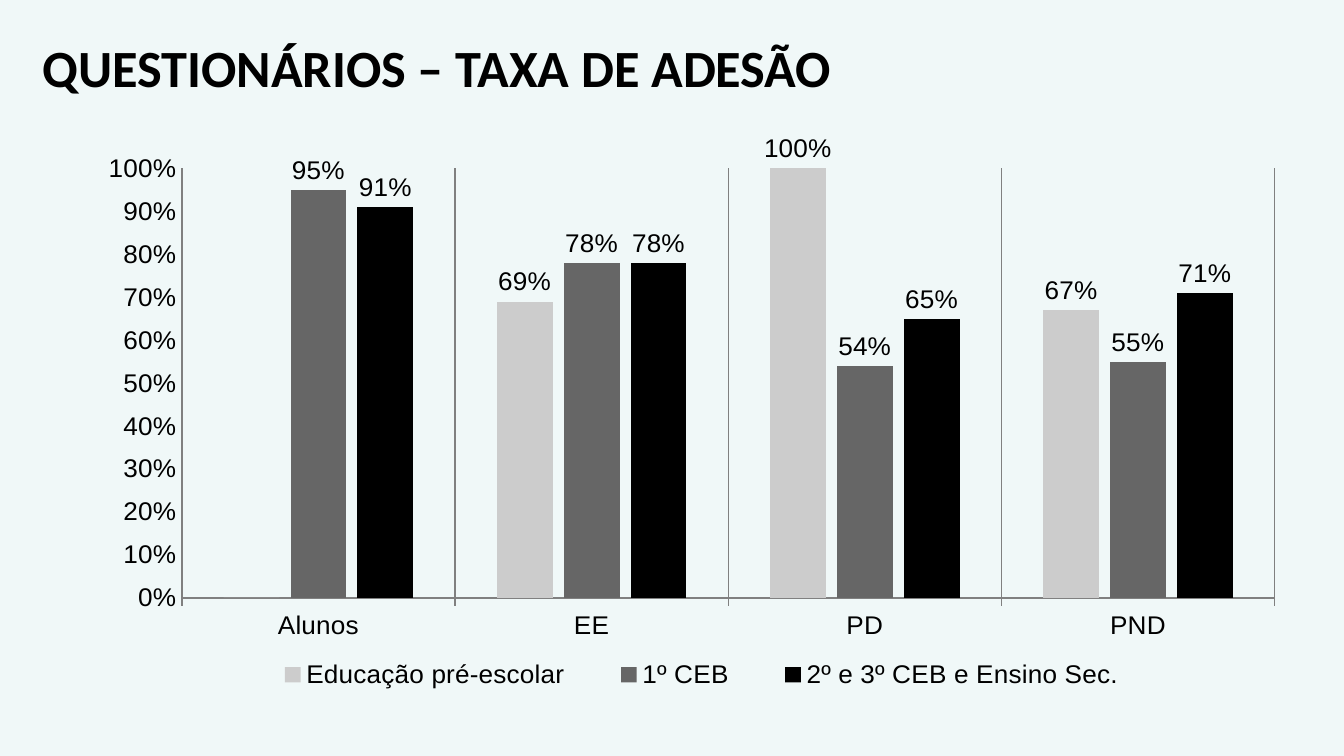
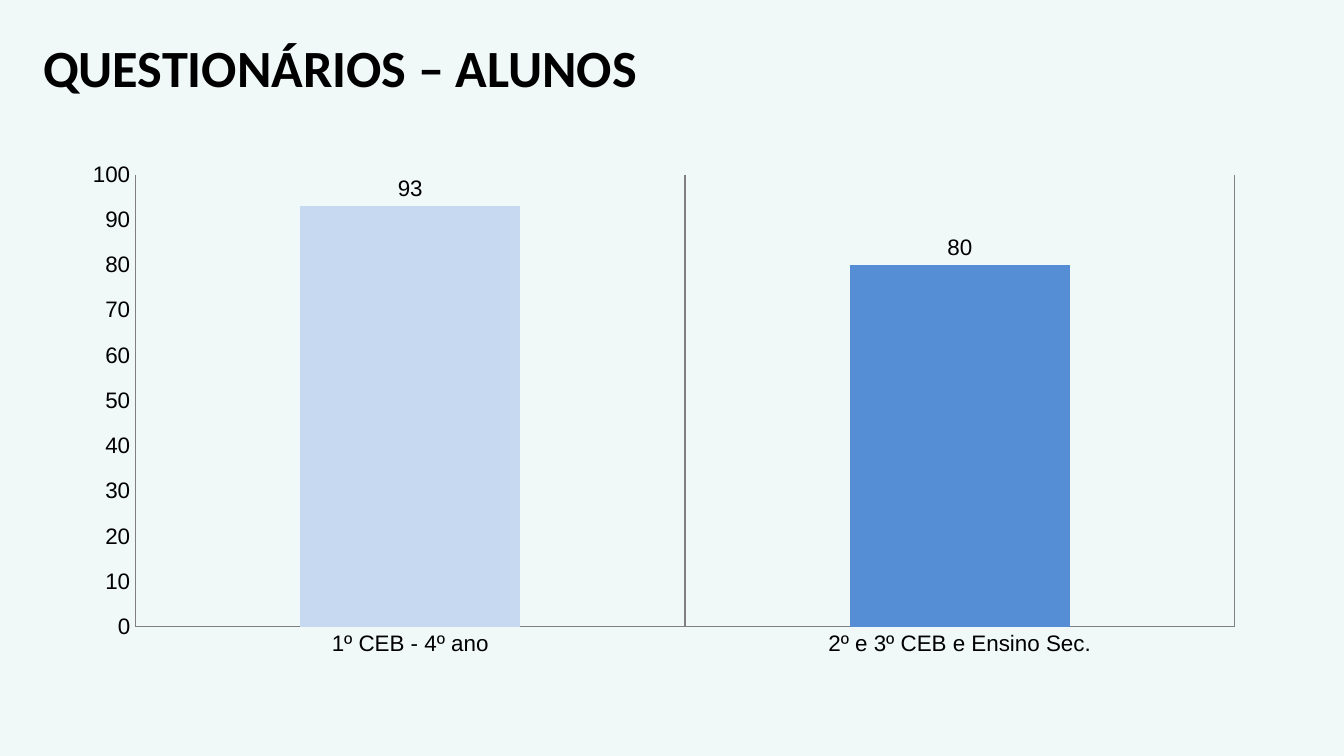
from dataclasses import dataclass
from typing import Optional

import lxml.etree
import pptx
import pptx.chart.chart
import pptx.chart.data
import pptx.dml.color
import pptx.dml.fill
import pptx.enum.chart
import pptx.enum.text
import pptx.oxml.ns
import pptx.slide
import pptx.util

SLIDE_WIDTH = pptx.util.Inches(10)
SLIDE_HEIGHT = SLIDE_WIDTH * 9 // 16
GRID_COLUMNS = 100
GRID_ROWS = 100
COLORS = {
    "background": "F0F8F8",
    "text": "000000",
    "axis": "808080",
    "preschool": "CCCCCC",
    "first_cycle": "666666",
    "upper_cycles": "000000",
    "fourth_year": "C6D9F1",
    "secondary": "558ED5",
}
TITLE_FONT = "Calibri"
CHART_FONT = "Arial"


@dataclass(frozen=True)
class Area:
    column: float
    row: float
    columns: float
    rows: float

    def lengths(self) -> tuple[int, int, int, int]:
        return (
            round(SLIDE_WIDTH * self.column / GRID_COLUMNS),
            round(SLIDE_HEIGHT * self.row / GRID_ROWS),
            round(SLIDE_WIDTH * self.columns / GRID_COLUMNS),
            round(SLIDE_HEIGHT * self.rows / GRID_ROWS),
        )


@dataclass(frozen=True)
class Shares:
    x: float
    y: float
    w: float
    h: float


@dataclass(frozen=True)
class Series:
    name: str
    values: tuple[float, ...]
    colors: tuple[str, ...]


@dataclass(frozen=True)
class ColumnChart:
    area: Area
    plot: Shares
    legend: Optional[Shares]
    categories: tuple[str, ...]
    series: tuple[Series, ...]
    maximum: float
    number_format: str
    font_size: int
    overlap: int
    category_tick: pptx.enum.chart.XL_TICK_MARK


@dataclass(frozen=True)
class ChartSlide:
    title: str
    title_column: float
    title_indent: float
    chart: ColumnChart


CHART_SLIDES = (
    ChartSlide(
        "QUESTIONÁRIOS – TAXA DE ADESÃO",
        title_column=2.2,
        title_indent=1,
        chart=ColumnChart(
            area=Area(5.1, 17.78, 89.8, 75.56),
            plot=Shares(0.094, 0.042, 0.906, 0.766),
            legend=Shares(0.14, 0.91, 0.77, 0.07),
            categories=("Alunos", "EE", "PD", "PND"),
            series=(
                Series("Educação pré-escolar", (0, 0.69, 1, 0.67), ("preschool",)),
                Series("1º CEB", (0.95, 0.78, 0.54, 0.55), ("first_cycle",)),
                Series("2º e 3º CEB e Ensino Sec.", (0.91, 0.78, 0.65, 0.71), ("upper_cycles",)),
            ),
            maximum=1,
            number_format="0%",
            font_size=14,
            overlap=-20,
            category_tick=pptx.enum.chart.XL_TICK_MARK.OUTSIDE,
        ),
    ),
    ChartSlide(
        "QUESTIONÁRIOS – ALUNOS",
        title_column=-2.8,
        title_indent=6,
        chart=ColumnChart(
            area=Area(5.1, 17.78, 89, 74.13),
            plot=Shares(0.056, 0.072, 0.919, 0.807),
            legend=None,
            categories=("1º CEB - 4º ano", "2º e 3º CEB e Ensino Sec."),
            series=(Series("Series 1", (93, 80), ("fourth_year", "secondary")),),
            maximum=100,
            number_format="0",
            font_size=12,
            overlap=40,
            category_tick=pptx.enum.chart.XL_TICK_MARK.NONE,
        ),
    ),
)


def color(name: str) -> pptx.dml.color.RGBColor:
    return pptx.dml.color.RGBColor.from_string(COLORS[name])


def paint(fill: pptx.dml.fill.FillFormat, name: str) -> None:
    fill.solid()
    fill.fore_color.rgb = color(name)


def add_title(slide: pptx.slide.Slide, design: ChartSlide) -> None:
    area = Area(design.title_column, 3.73, 94.5, 16.71)
    frame = slide.shapes.add_textbox(*area.lengths()).text_frame
    frame.word_wrap = True
    frame.margin_left = round(SLIDE_WIDTH * design.title_indent / GRID_COLUMNS)
    frame.vertical_anchor = pptx.enum.text.MSO_ANCHOR.TOP
    paragraph = frame.paragraphs[0]
    paragraph.text = design.title
    paragraph.font.name = TITLE_FONT
    paragraph.font.size = pptx.util.Pt(28)
    paragraph.font.bold = True
    paragraph.font.color.rgb = color("text")


def place_part(chart: pptx.chart.chart.Chart, part: str, shares: Shares, index: int) -> None:
    qualified = pptx.oxml.ns.qn
    element = chart.element.find(f".//{qualified(f'c:{part}')}")
    for existing in element.findall(qualified("c:layout")):
        element.remove(existing)
    layout = lxml.etree.Element(qualified("c:layout"))
    manual = lxml.etree.SubElement(layout, qualified("c:manualLayout"))
    settings = [("layoutTarget", "inner")] if part == "plotArea" else []
    settings += [("xMode", "edge"), ("yMode", "edge")]
    settings += [(name, str(getattr(shares, name))) for name in "xywh"]
    for name, value in settings:
        lxml.etree.SubElement(manual, qualified(f"c:{name}")).set("val", value)
    element.insert(index, layout)


def style_axes(chart: pptx.chart.chart.Chart, design: ColumnChart) -> None:
    category_axis, value_axis = chart.category_axis, chart.value_axis
    category_axis.has_major_gridlines = True
    category_axis.major_tick_mark = design.category_tick
    value_axis.has_major_gridlines = False
    value_axis.major_tick_mark = pptx.enum.chart.XL_TICK_MARK.NONE
    value_axis.minimum_scale = 0
    value_axis.maximum_scale = design.maximum
    value_axis.major_unit = design.maximum / 10
    value_axis.tick_labels.number_format = design.number_format
    value_axis.tick_labels.number_format_is_linked = False
    for part in (category_axis, value_axis, category_axis.major_gridlines):
        part.format.line.color.rgb = color("axis")
        part.format.line.width = pptx.util.Pt(0.75)


def style_series(chart: pptx.chart.chart.Chart, design: ColumnChart) -> None:
    for drawn, series in zip(chart.plots[0].series, design.series):
        drawn.invert_if_negative = False
        paint(drawn.format.fill, series.colors[0])
        if len(series.colors) > 1:
            for index, name in enumerate(series.colors):
                paint(drawn.points[index].format.fill, name)
        hide_zeros = ";;" if 0 in series.values else ""
        labels = drawn.data_labels
        labels.show_value = True
        labels.position = pptx.enum.chart.XL_LABEL_POSITION.OUTSIDE_END
        labels.number_format = design.number_format + hide_zeros
        labels.number_format_is_linked = False


def add_column_chart(slide: pptx.slide.Slide, design: ColumnChart) -> None:
    data = pptx.chart.data.CategoryChartData()
    data.categories = design.categories
    for series in design.series:
        data.add_series(series.name, series.values)
    chart = slide.shapes.add_chart(
        pptx.enum.chart.XL_CHART_TYPE.COLUMN_CLUSTERED, *design.area.lengths(), data
    ).chart
    chart.has_title = False
    chart.font.name = CHART_FONT
    chart.font.size = pptx.util.Pt(design.font_size)
    chart.font.color.rgb = color("text")
    chart.has_legend = design.legend is not None
    if design.legend is not None:
        chart.legend.position = pptx.enum.chart.XL_LEGEND_POSITION.BOTTOM
        chart.legend.include_in_layout = False
        place_part(chart, "legend", design.legend, 1)
    plot = chart.plots[0]
    plot.vary_by_categories = False
    plot.gap_width = 150
    plot.overlap = design.overlap
    style_axes(chart, design)
    style_series(chart, design)
    place_part(chart, "plotArea", design.plot, 0)


def main() -> None:
    presentation = pptx.Presentation()
    presentation.slide_width = SLIDE_WIDTH
    presentation.slide_height = SLIDE_HEIGHT
    blank_layout = presentation.slide_layouts[6]
    for chart_slide in CHART_SLIDES:
        slide = presentation.slides.add_slide(blank_layout)
        paint(slide.background.fill, "background")
        add_title(slide, chart_slide)
        add_column_chart(slide, chart_slide.chart)
    presentation.save("out.pptx")


if __name__ == "__main__":
    main()
